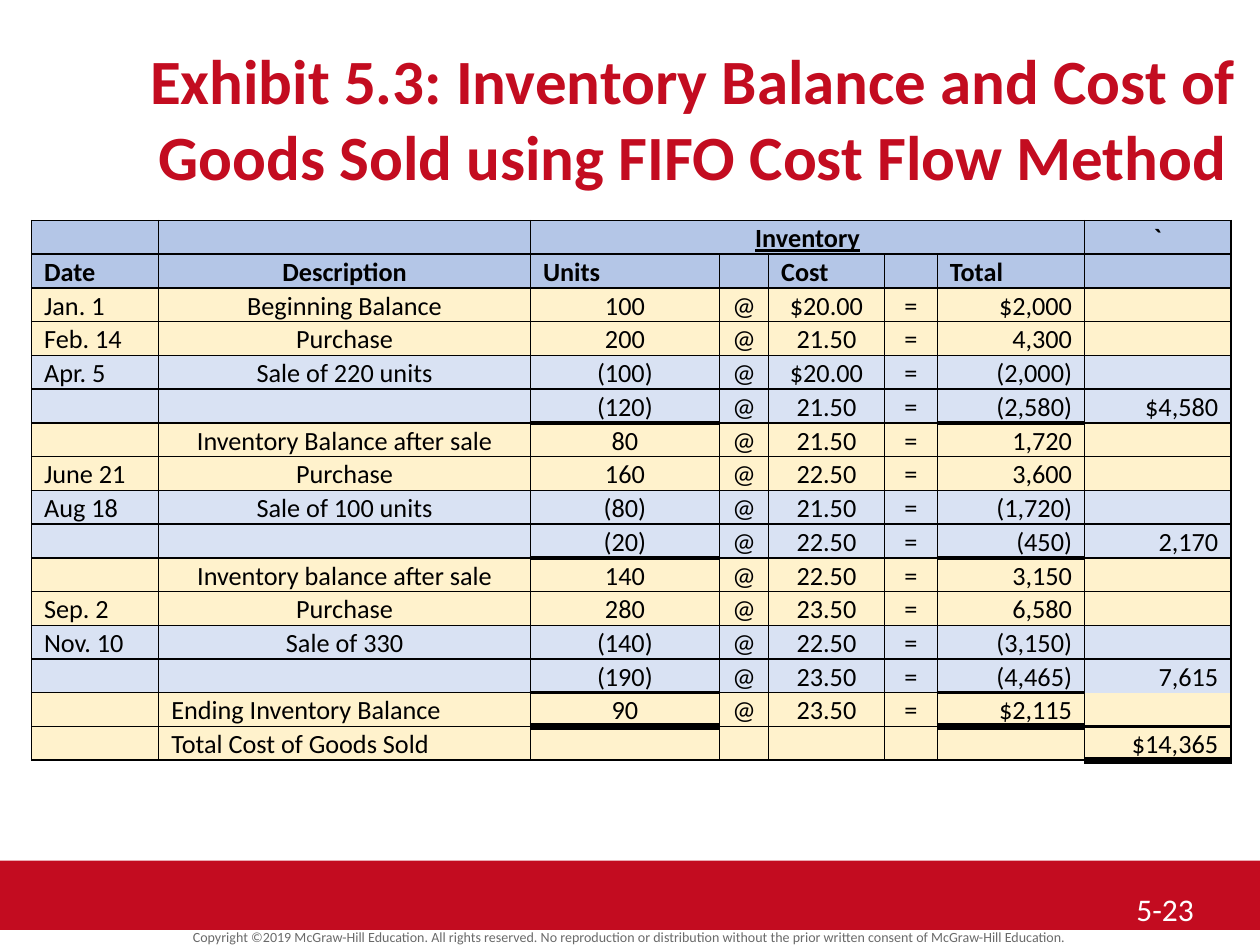
from lxml import etree
from pptx import Presentation
from pptx import util as u
from pptx.dml.color import RGBColor
from pptx.enum import shapes, text
from pptx.oxml.ns import qn

FONT = "Calibri"
RED, BLACK, WHITE, GREY = "C30C20", "000000", "FFFFFF", "6A6A6A"
HEADER, CREAM, BLUE = "B4C6E7", "FFF2CC", "D9E2F3"
LEFT, CENTER, RIGHT = text.PP_ALIGN.LEFT, text.PP_ALIGN.CENTER, text.PP_ALIGN.RIGHT
COLUMN_WIDTHS = [1.01, 2.95, 1.5, 0.39, 0.92, 0.42, 1.17, 1.16]
COLUMN_ALIGNMENTS = [LEFT, CENTER, CENTER, CENTER, CENTER, CENTER, RIGHT, RIGHT]
UNITS, TOTAL, SOLD = 2, 6, 7
HEADINGS = [
    ["", "", "Inventory", "", "", "", "", "`"],
    ["Date", "Description", "Units", "", "Cost", "", "Total", ""],
]
ENTRIES = [
    (CREAM, "Jan. 1", "Beginning Balance", "100", "$20.00", "$2,000", ""),
    (CREAM, "Feb. 14", "Purchase", "200", "21.50", "4,300", ""),
    (BLUE, "Apr. 5", "Sale of 220 units", "(100)", "$20.00", "(2,000)", ""),
    (BLUE, "", "", "(120)", "21.50", "(2,580)", "$4,580"),
    (CREAM, "", "Inventory Balance after sale", "80", "21.50", "1,720", ""),
    (CREAM, "June 21", "Purchase", "160", "22.50", "3,600", ""),
    (BLUE, "Aug 18", "Sale of 100 units", "(80)", "21.50", "(1,720)", ""),
    (BLUE, "", "", "(20)", "22.50", "(450)", "2,170"),
    (CREAM, "", "Inventory balance after sale", "140", "22.50", "3,150", ""),
    (CREAM, "Sep. 2", "Purchase", "280", "23.50", "6,580", ""),
    (BLUE, "Nov. 10", "Sale of 330", "(140)", "22.50", "(3,150)", ""),
    (BLUE, "", "", "(190)", "23.50", "(4,465)", "7,615"),
    (CREAM, "", "Ending Inventory Balance", "90", "23.50", "$2,115", ""),
    (CREAM, "", "Total Cost of Goods Sold", "", "", "", "$14,365"),
]
RULES_BELOW = {(row, column): 2.25 for row in (5, 9, 13) for column in (UNITS, TOTAL)}
RULES_BELOW.update({(14, UNITS): 4.5, (14, TOTAL): 4.5,
                    (13, SOLD): 0, (14, SOLD): 2.25, (15, SOLD): 4.5})


def rgb(color):
    """Turn a hex string into a colour."""
    return RGBColor.from_string(color)


def format_paragraph(paragraph, size, color, alignment=LEFT, bold=False, underline=False):
    """Align a paragraph and format its runs."""
    paragraph.alignment = alignment
    for run in paragraph.runs:
        font = run.font
        font.name, font.size, font.bold = FONT, u.Pt(size), bold
        font.underline = underline
        font.color.rgb = rgb(color)


def set_title(slide, wording):
    """Fill and place the title placeholder."""
    title = slide.shapes.title
    title.left, title.top = u.Inches(1), u.Inches(0.25)
    title.width, title.height = u.Inches(9), u.Inches(0.67)
    frame = title.text_frame
    frame.text = wording
    frame.word_wrap = True
    frame.auto_size = text.MSO_AUTO_SIZE.NONE
    frame.vertical_anchor = text.MSO_ANCHOR.TOP
    frame.margin_top = u.Inches(0.08)
    format_paragraph(frame.paragraphs[0], 36, RED, CENTER, bold=True)


def add_band(slide):
    """Draw the footer band."""
    band = slide.shapes.add_shape(shapes.MSO_SHAPE.RECTANGLE, u.Inches(0), u.Inches(6.83),
                                  u.Inches(10), u.Inches(0.55))
    band.shadow.inherit = False
    band.fill.solid()
    band.fill.fore_color.rgb = rgb(RED)
    band.line.fill.background()


def add_label(slide, wording, left, top, width, height, size, color, alignment=LEFT):
    """Add one line of text, centred vertically in its box."""
    box = slide.shapes.add_textbox(*map(u.Inches, (left, top, width, height)))
    frame = box.text_frame
    frame.text = wording
    frame.word_wrap = True
    frame.margin_top = frame.margin_bottom = 0
    frame.vertical_anchor = text.MSO_ANCHOR.MIDDLE
    format_paragraph(frame.paragraphs[0], size, color, alignment)


def set_borders(cell, row, column):
    """Draw the four borders of a cell, or none where the width is zero."""
    widths = {"L": 1, "R": 1, "T": RULES_BELOW.get((row - 1, column), 1),
              "B": RULES_BELOW.get((row, column), 1)}
    properties = cell._tc.get_or_add_tcPr()
    for side, width in widths.items():
        line = etree.SubElement(properties, qn(f"a:ln{side}"), w=str(u.Pt(width)))
        if width:
            fill = etree.SubElement(line, qn("a:solidFill"))
            etree.SubElement(fill, qn("a:srgbClr"), val=BLACK)
        else:
            etree.SubElement(line, qn("a:noFill"))


def fill_cell(cell, wording, color, alignment, bold, underline):
    """Write and format one table cell."""
    cell.margin_top = cell.margin_bottom = 0
    cell.fill.solid()
    cell.fill.fore_color.rgb = rgb(color)
    paragraph = cell.text_frame.paragraphs[0]
    paragraph.text = wording
    paragraph.line_spacing, paragraph.space_after = 1.07, u.Pt(8)
    format_paragraph(paragraph, 15, BLACK, alignment, bold, underline)
    if not wording:
        etree.SubElement(paragraph._p, qn("a:endParaRPr"), sz="1500")


def table_rows():
    """Return the fill and the eight texts of every row."""
    rows = [(HEADER, heading) for heading in HEADINGS]
    for color, date, description, units, cost, total, sold in ENTRIES:
        at, equals = ("@", "=") if units else ("", "")
        rows.append((color, [date, description, units, at, cost, equals, total, sold]))
    return rows


def cell_alignment(row, column, row_count):
    """Return the alignment that a cell's place calls for."""
    if row == 0:
        return CENTER
    if row == 1:
        return CENTER if column == 1 else LEFT
    if column == 1 and row >= row_count - 2:
        return LEFT
    return COLUMN_ALIGNMENTS[column]


def add_inventory_table(slide):
    """Add the inventory table."""
    rows = table_rows()
    table = slide.shapes.add_table(len(rows), len(COLUMN_WIDTHS), u.Inches(0.25), u.Inches(1.75),
                                   u.Inches(9.52), u.Inches(4.28)).table
    table.first_row = table.horz_banding = False
    for column, width in zip(table.columns, COLUMN_WIDTHS):
        column.width = u.Inches(width)
    for row, (color, wordings) in enumerate(rows):
        for column, wording in enumerate(wordings):
            cell = table.cell(row, column)
            set_borders(cell, row, column)
            fill_cell(cell, wording, color, cell_alignment(row, column, len(rows)),
                      bold=row < len(HEADINGS), underline=wording == "Inventory")
    table.cell(0, UNITS).merge(table.cell(0, TOTAL))


def main():
    """Build and save the slide."""
    presentation = Presentation()
    presentation.slide_width, presentation.slide_height = u.Inches(10), u.Inches(7.5)
    slide = presentation.slides.add_slide(presentation.slide_layouts[5])
    add_band(slide)
    add_label(slide, "Copyright ©2019 McGraw-Hill Education. All rights reserved. No reproduction or "
              "distribution without the prior written consent of McGraw-Hill Education.",
              0, 7.34, 10, 0.19, 8, GREY, CENTER)
    set_title(slide, "Exhibit 5.3: Inventory Balance and Cost of Goods Sold using FIFO Cost Flow Method")
    add_label(slide, "5-23", 8.92, 7, 0.92, 0.42, 18, WHITE)
    add_inventory_table(slide)
    presentation.save("out.pptx")


if __name__ == "__main__":
    main()
